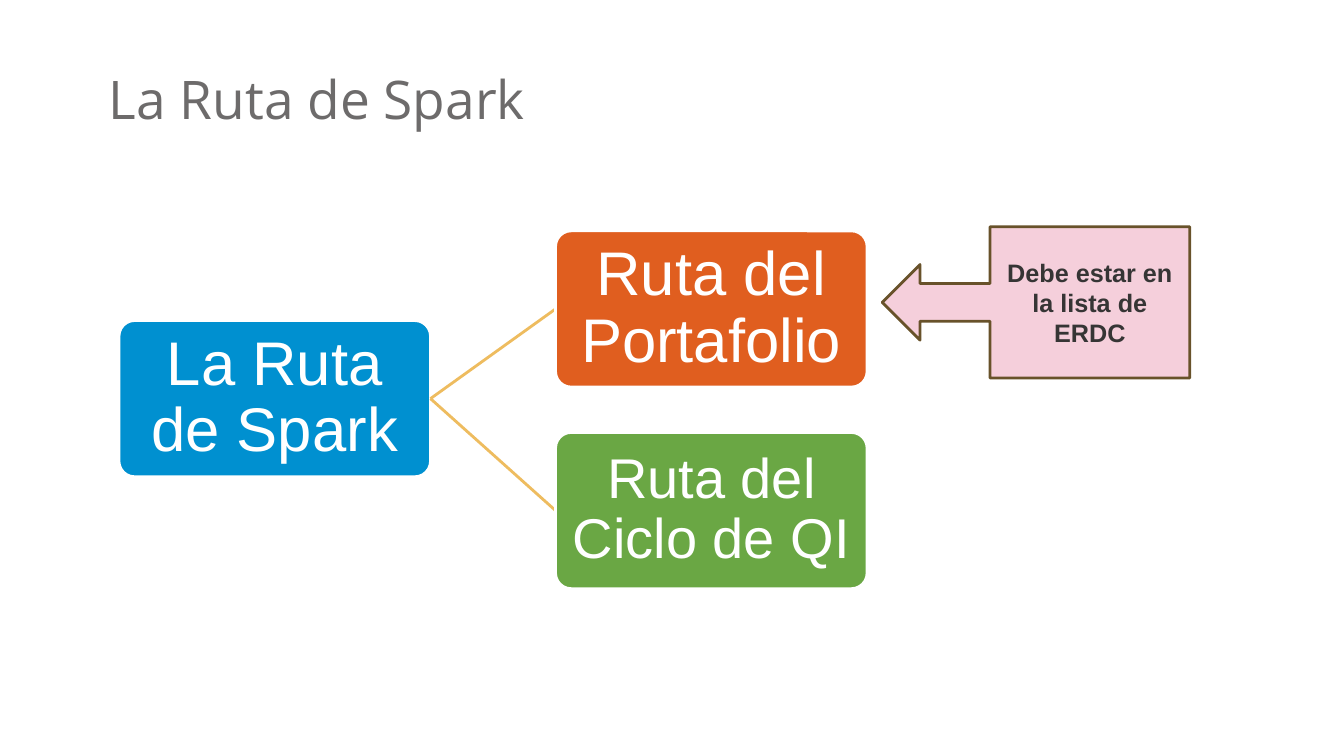
from pptx import Presentation
from pptx.dml.color import RGBColor
from pptx.enum.shapes import MSO_CONNECTOR as CONN, MSO_SHAPE as SHAPE
from pptx.enum.text import MSO_ANCHOR as ANCHOR, PP_ALIGN as ALIGN
from pptx.oxml.ns import qn
from pptx.util import Inches, Pt

COLORS = {"title": "6D6B6B", "root": "0090D0", "portfolio": "E05E1F", "cycle": "6AA744",
          "white": "FFFFFF", "link": "EEBC5F", "note": "F5CFDB", "note_line": "68522A",
          "note_text": "363535"}
TITLE = "La Ruta de Spark"
ROOT = ("La Ruta de Spark", "root", 44)
BRANCHES = [("Ruta del Portafolio", "portfolio", 44), ("Ruta del Ciclo de QI", "cycle", 40)]
NOTE = "Debe estar en la lista de ERDC"
BOX_W, BOX_H = 3.09, 1.55
ROOT_X, BRANCH_X, BRANCH_Y, STEP = 1.18, 5.51, 2.29, 2
ROOT_Y = BRANCH_Y + STEP * (len(BRANCHES) - 1) / 2 - 0.11


def color(name):
    """Return the named colour."""
    return RGBColor.from_string(COLORS[name])


def set_text(s, text, color_name, anchor, inset, align, spacing, **font):
    """Write one formatted paragraph into a shape."""
    tf = s.text_frame
    frame = {"word_wrap": True, "vertical_anchor": anchor}
    if inset is not None:
        frame.update({f"margin_{side}": Inches(inset) for side in ("left", "top", "right", "bottom")})
    for key, value in frame.items():
        setattr(tf, key, value)
    p = tf.paragraphs[0]
    p.alignment, p.line_spacing = align, spacing
    r = p.add_run()
    r.text = text
    for key, value in font.items():
        setattr(r.font, key, value)
    r.font.color.rgb = color(color_name)


def add_shape(shapes, kind, x, y, w, h, fill, line):
    """Add a filled and outlined shape."""
    s = shapes.add_shape(kind, Inches(x), Inches(y), Inches(w), Inches(h))
    s.shadow.inherit = False
    s.fill.solid()
    s.fill.fore_color.rgb = color(fill)
    s.line.color.rgb = color(line)
    s.line.width = Pt(2)
    return s


def add_box(shapes, x, y, text, fill, size):
    """Add a rounded box with centred white text."""
    s = add_shape(shapes, SHAPE.ROUNDED_RECTANGLE, x, y, BOX_W, BOX_H, fill, "white")
    s.adjustments[0] = 0.1
    set_text(s, text, "white", ANCHOR.MIDDLE, 0.03, ALIGN.CENTER, 0.9, name="Arial", size=Pt(size))
    return s


def add_link(shapes, root):
    """Add a line that starts at the right side of the root box."""
    link = shapes.add_connector(CONN.STRAIGHT, 0, 0, 0, 0)
    link.line.color.rgb = color("link")
    link.line.width = Pt(2)
    link._element.spPr.append(link._element.makeelement(qn("a:effectLst"), {}))
    link.begin_connect(root, 3)
    return link


def main():
    """Build the slide and save it."""
    prs = Presentation()
    prs.slide_width, prs.slide_height = Inches(13.33), Inches(7.5)
    shapes = prs.slides.add_slide(prs.slide_layouts[6]).shapes

    title = shapes.add_textbox(Inches(0.98), Inches(0.36), Inches(6.59), Inches(0.98))
    set_text(title, TITLE, "title", ANCHOR.BOTTOM, None, ALIGN.LEFT, None, name="Open Sans", size=Pt(38))

    root = add_box(shapes, ROOT_X, ROOT_Y, *ROOT)
    for i, branch in enumerate(BRANCHES):
        link = add_link(shapes, root)
        box = add_box(shapes, BRANCH_X, BRANCH_Y + i * STEP, *branch)
        link.end_connect(box, 1)

    note = add_shape(shapes, SHAPE.LEFT_ARROW_CALLOUT, 8.75, 2.25, 3.05, 1.5, "note", "note_line")
    set_text(note, NOTE, "note_text", ANCHOR.MIDDLE, None, ALIGN.CENTER, None,
             name="Arial", size=Pt(18), bold=True)
    prs.save("out.pptx")


if __name__ == "__main__":
    main()
